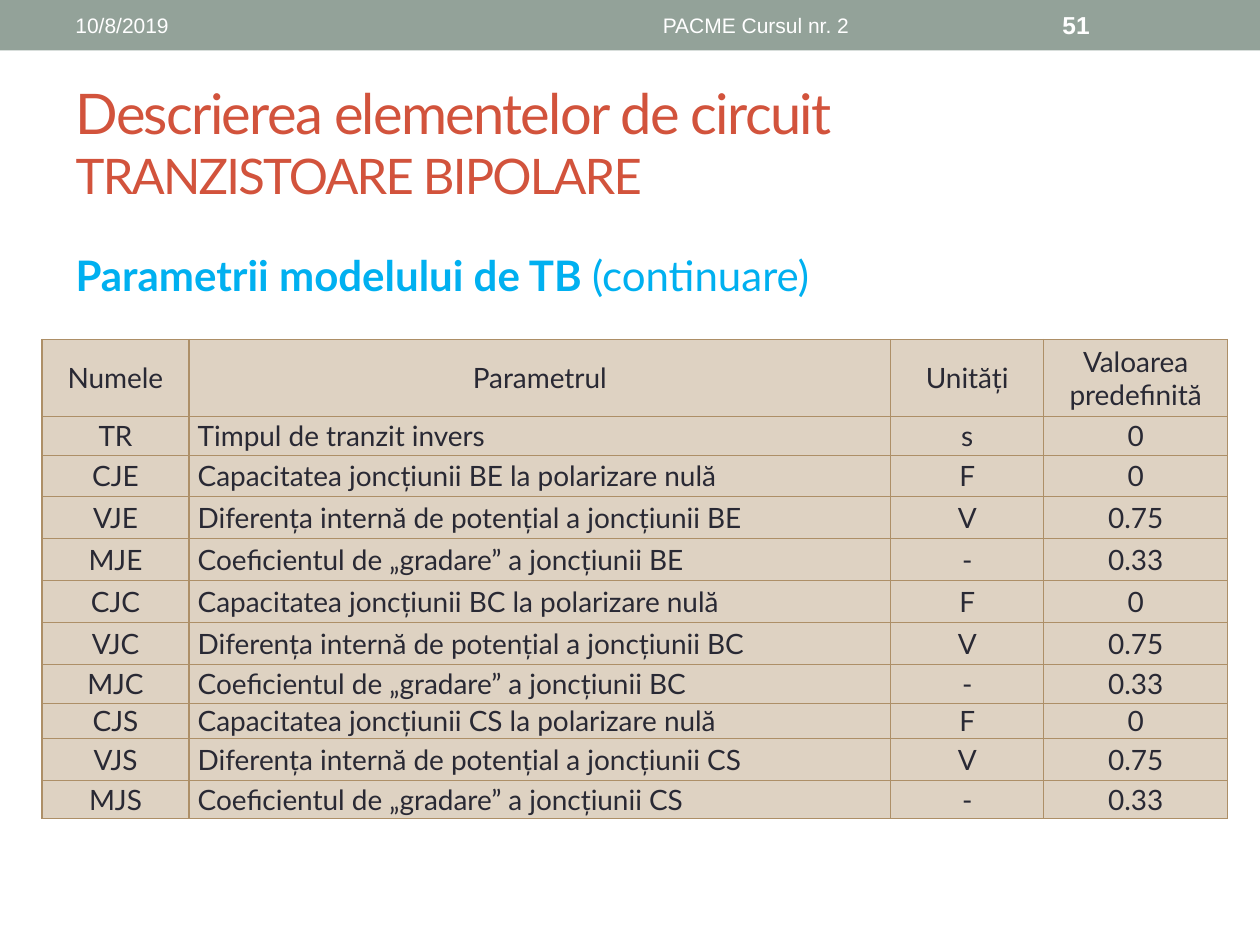
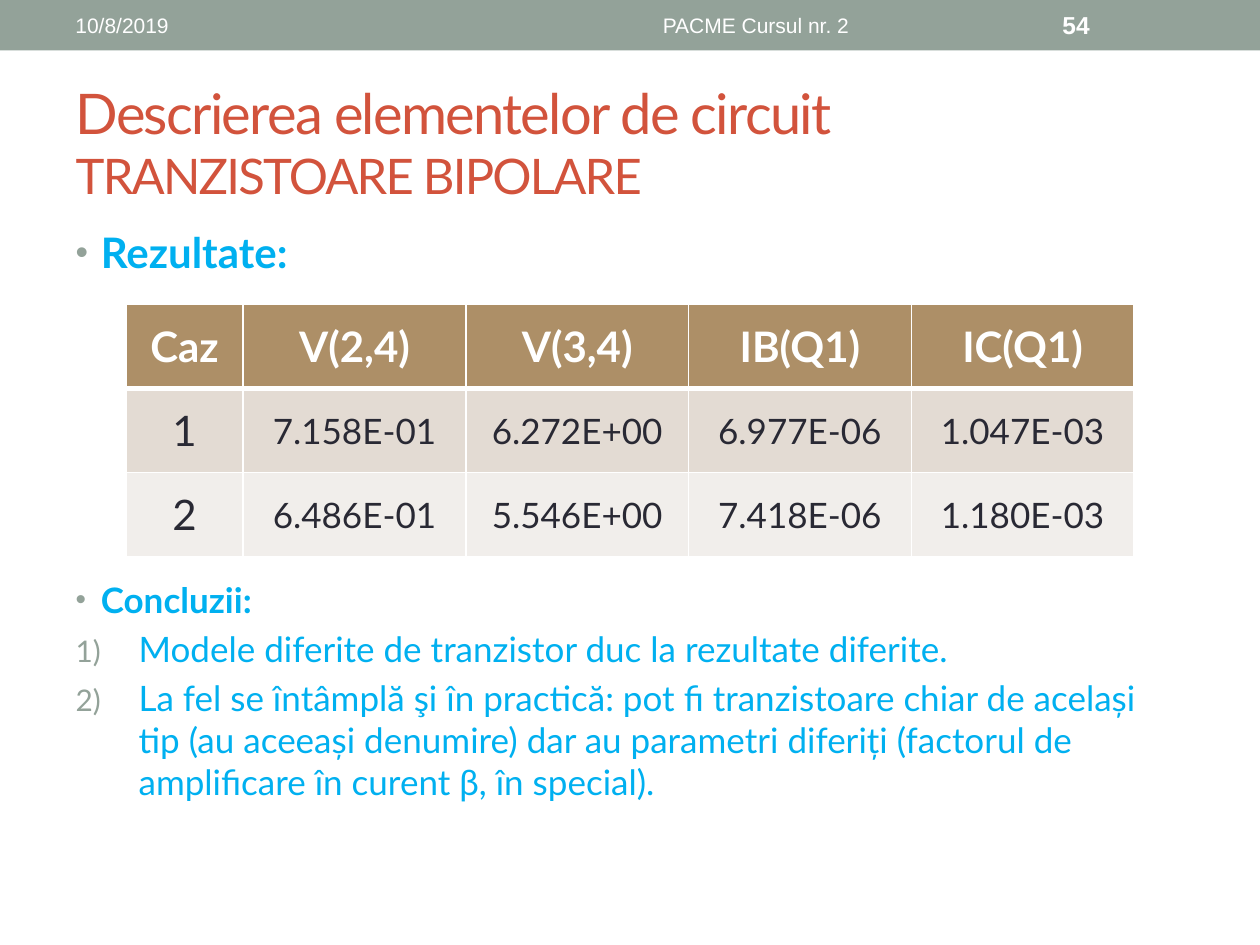
from lxml.etree import SubElement
from pptx import Presentation
from pptx.dml.color import RGBColor
from pptx.enum.shapes import MSO_SHAPE as Shape
from pptx.enum.text import MSO_ANCHOR as Anchor, MSO_AUTO_SIZE as AutoSize, PP_ALIGN as Align
from pptx.oxml import parse_xml
from pptx.oxml.ns import nsdecls, qn
from pptx.util import Pt

COLORS = {
    "band": "93A299",
    "title": "D2533C",
    "accent": "00B0F0",
    "ink": "292934",
    "white": "FFFFFF",
    "brown": "AD8F67",
    "sand": "DED2C2",
    "row_dark": "E3DBD3",
    "row_light": "F1EEEB",
}
FONT = "Lato"
HEADER_FONT = "Arial"
TITLE_BOX = (36, 42, 648, 77.5)
HEADER_BOX = (0, 0, 720, 28.8)

JUNCTIONS = {"E": "BE", "C": "BC", "S": "CS"}
JUNCTION_PARAMETERS = [
    ("CJ", "Capacitatea joncțiunii {} la polarizare nulă", "F", "0"),
    ("VJ", "Diferența internă de potențial a joncțiunii {}", "V", "0.75"),
    ("MJ", "Coeficientul de „gradare” a joncțiunii {}", "-", "0.33"),
]
PARAMETER_ROWS = [
    ("Numele", "Parametrul", "Unități", "Valoarea predefinită"),
    ("TR", "Timpul de tranzit invers", "s", "0"),
] + [
    (name + letter, meaning.format(junction), unit, value)
    for letter, junction in JUNCTIONS.items()
    for name, meaning, unit, value in JUNCTION_PARAMETERS
]
RESULT_ROWS = [
    ("Caz", "V(2,4)", "V(3,4)", "IB(Q1)", "IC(Q1)"),
    ("1", "7.158E-01", "6.272E+00", "6.977E-06", "1.047E-03"),
    ("2", "6.486E-01", "5.546E+00", "7.418E-06", "1.180E-03"),
]


def rgb(color):
    return RGBColor.from_string(COLORS[color])


def add_span(para, text, size, color, bold=False, font=FONT):
    span = para.add_run()
    span.text = text
    span.font.name = font
    span.font.size = Pt(size)
    span.font.bold = bold
    span.font.color.rgb = rgb(color)
    return span


def place(shape, box):
    shape.left, shape.top, shape.width, shape.height = map(Pt, box)


def add_header(page, box, number):
    left, top, width, height = box
    band = page.shapes.add_shape(Shape.RECTANGLE, *map(Pt, box))
    band.shadow.inherit = False
    band.fill.solid()
    band.fill.fore_color.rgb = rgb("band")
    band.line.fill.background()
    labels = [
        (36, 228, "10/8/2019", Align.LEFT, 12, False),
        (270, 324, "PACME Cursul nr. 2", Align.CENTER, 12, False),
        (600, 84, number, Align.LEFT, 14, True),
    ]
    for offset, label_width, text, align, size, bold in labels:
        label = page.shapes.add_textbox(
            Pt(left + offset), Pt(top + 1.5), Pt(label_width), Pt(height - 3)
        )
        frame = label.text_frame
        frame.word_wrap = True
        frame.vertical_anchor = Anchor.MIDDLE
        para = frame.paragraphs[0]
        para.alignment = align
        add_span(para, text, size, "white", bold, HEADER_FONT)


def fill_title(page, box):
    title = page.shapes.title
    place(title, box)
    frame = title.text_frame
    frame.auto_size = AutoSize.NONE
    frame.vertical_anchor = Anchor.MIDDLE
    para = frame.paragraphs[0]
    para.alignment = Align.LEFT
    first = add_span(para, "Descrierea elementelor de circuit", 32, "title")
    para.add_line_break()
    second = add_span(para, "TRANZISTOARE BIPOLARE", 28, "title")
    for span in (first, second):
        span.font._element.set("spc", "-100")


def format_item(para, marker, indent, space_before):
    para.alignment = Align.LEFT
    para.space_before = Pt(space_before)
    props = para._p.get_or_add_pPr()
    props.set("marL", str(Pt(indent)))
    props.set("indent", str(-Pt(indent)))
    if marker == "none":
        SubElement(props, qn("a:buNone"))
        return
    color = SubElement(props, qn("a:buClr"))
    SubElement(color, qn("a:srgbClr"), val=COLORS["band"])
    SubElement(props, qn("a:buSzPct"), val="85000")
    if marker == "number":
        SubElement(props, qn("a:buAutoNum"), type="arabicParenR")
    else:
        SubElement(props, qn("a:buFont"), typeface="Arial")
        SubElement(props, qn("a:buChar"), char="•")


def fill_body(page, box, items):
    body = page.placeholders[1]
    place(body, box)
    frame = body.text_frame
    frame.auto_size = AutoSize.NONE
    frame.vertical_anchor = Anchor.TOP
    for index, (marker, indent, space_before, size, spans) in enumerate(items):
        para = frame.add_paragraph() if index else frame.paragraphs[0]
        format_item(para, marker, indent, space_before)
        for text, bold in spans:
            add_span(para, text, size, "accent", bold)


def set_borders(cell, color, widths):
    props = cell._tc.get_or_add_tcPr()
    for index, (side, width) in enumerate(zip("LRTB", widths)):
        props.insert(index, parse_xml(
            f'<a:ln{side} {nsdecls("a")} w="{Pt(width)}"><a:solidFill>'
            f'<a:srgbClr val="{COLORS[color]}"/></a:solidFill></a:ln{side}>'
        ))


def add_grid(page, left, top, widths, heights, rows, style_cell):
    frame = page.shapes.add_table(
        len(rows), len(widths), Pt(left), Pt(top), Pt(sum(widths)), Pt(sum(heights))
    )
    table = frame.table
    for column, width in zip(table.columns, widths):
        column.width = Pt(width)
    for row, height in zip(table.rows, heights):
        row.height = Pt(height)
    for row, texts in enumerate(rows):
        for column, text in enumerate(texts):
            cell = table.cell(row, column)
            cell.vertical_anchor = Anchor.MIDDLE
            cell.fill.solid()
            cell.text_frame.paragraphs[0].alignment = Align.CENTER
            style_cell(cell, row, column, text)


def style_parameter(cell, row, column, text):
    cell.margin_left = cell.margin_right = Pt(5)
    cell.margin_top = cell.margin_bottom = 0
    cell.fill.fore_color.rgb = rgb("sand")
    para = cell.text_frame.paragraphs[0]
    if row and column == 1:
        para.alignment = Align.LEFT
    add_span(para, text, 16, "ink")
    set_borders(cell, "brown", [0.75] * 4)


def style_result(cell, row, column, text):
    header = row == 0
    cell.fill.fore_color.rgb = rgb(("brown", "row_dark", "row_light")[row])
    size = 24 if header or column == 0 else 20
    add_span(cell.text_frame.paragraphs[0], text, size, "white" if header else "ink", header)
    set_borders(cell, "white", [1, 1, 3 if row == 1 else 1, 3 if header else 1])


def add_page(deck, number):
    page = deck.slides.add_slide(deck.slide_layouts[1])
    add_header(page, HEADER_BOX, number)
    fill_title(page, TITLE_BOX)
    return page


def build_parameters(deck):
    page = add_page(deck, "51")
    heading = [("Parametrii modelului de TB ", True), ("(continuare)", False)]
    fill_body(page, (36, 139, 648, 36), [("none", 14.4, 0, 24, heading)])
    heights = [44, 22.3, 23.5, 24, 24, 24, 24, 22.3, 20, 24, 22]
    add_grid(page, 24, 194, [84, 401, 87.5, 105], heights, PARAMETER_ROWS, style_parameter)


def build_results(deck):
    page = add_page(deck, "54")
    fill_body(page, (36, 126, 648, 384), [
        ("bullet", 14.4, 0, 24, [("Rezultate:", True)]),
        ("bullet", 14.4, 172, 20, [("Concluzii:", True)]),
        ("number", 36, 4, 20, [
            ("Modele diferite de tranzistor duc la rezultate diferite.", False),
        ]),
        ("number", 36, 4, 20, [
            ("La fel se întâmplă şi în practică: pot fi tranzistoare chiar de același tip "
             "(au aceeași denumire) dar au parametri diferiți (factorul de amplificare "
             "în curent β, în special).", False),
        ]),
    ])
    add_grid(page, 72, 174, [67] + [127.25] * 4, [48] * 3, RESULT_ROWS, style_result)


def main():
    deck = Presentation()
    deck.slide_width, deck.slide_height = Pt(720), Pt(540)
    build_parameters(deck)
    build_results(deck)
    deck.save("out.pptx")


if __name__ == "__main__":
    main()
